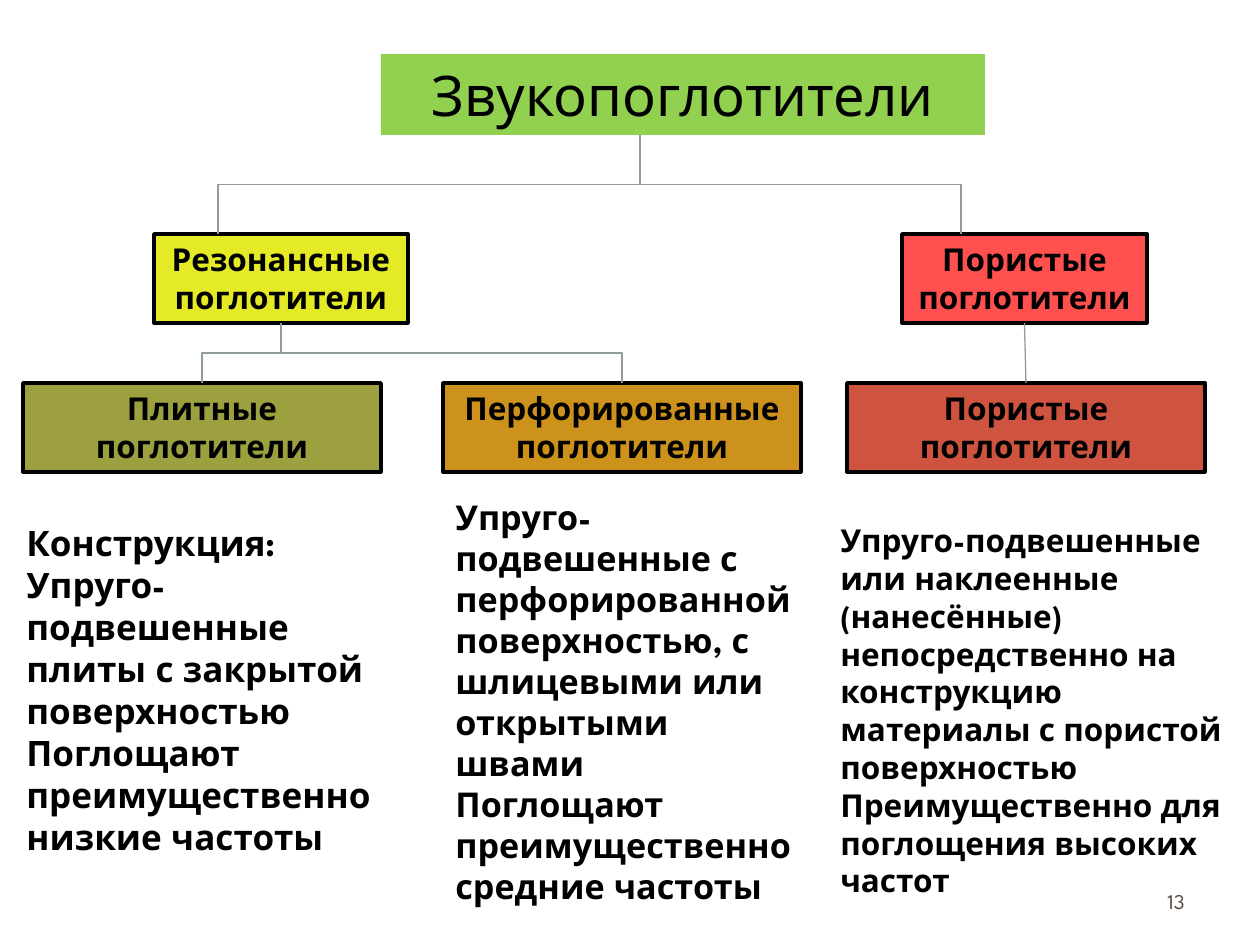
from dataclasses import dataclass

from lxml.etree import SubElement
from pptx import Presentation
from pptx.dml.color import RGBColor
from pptx.enum.shapes import MSO_CONNECTOR as Connector, MSO_SHAPE as Shape
from pptx.enum.text import MSO_ANCHOR as Anchor, MSO_AUTO_SIZE as AutoSize, PP_ALIGN as Align
from pptx.oxml.ns import qn
from pptx.util import Emu, Pt


@dataclass(frozen=True)
class Theme:
    font: str = "League Spartan"
    ink: str = "000000"
    muted: str = "564B3C"
    branch: str = "8F9F96"
    title_fill: str = "92D050"
    resonant: str = "E5EA26"
    porous: str = "FF5050"
    plate: str = "9DA03F"
    perforated: str = "CD921B"
    porous_kind: str = "CF543F"
    title_size: float = 32
    label_size: float = 18
    plate_size: float = 20
    perforated_size: float = 19.5
    porous_size: float = 18
    number_size: float = 12
    border: float = 2
    branch_width: float = 0.75


def px(value):
    return Emu(round(value * 914400 / 126))


class Diagram:
    def __init__(self, slide, theme):
        self.shapes = slide.shapes
        self.theme = theme

    def fill_text(self, frame, text, size, align, bold=True, color=None):
        frame.text = text
        for para in frame.paragraphs:
            para.alignment = align
            for span in para.runs:
                span.font.name = self.theme.font
                span.font.size = Pt(size)
                span.font.bold = bold
                span.font.color.rgb = RGBColor.from_string(color or self.theme.ink)

    def rectangle(self, area, fill):
        box = self.shapes.add_shape(Shape.RECTANGLE, *map(px, area))
        box.shadow.inherit = False
        box.fill.solid()
        box.fill.fore_color.rgb = RGBColor.from_string(fill)
        box.text_frame.vertical_anchor = Anchor.TOP
        return box

    def title(self, area, text):
        box = self.rectangle(area, self.theme.title_fill)
        box.line.fill.background()
        box.text_frame.word_wrap = True
        self.fill_text(box.text_frame, text, self.theme.title_size, Align.CENTER, bold=False)

    def node(self, area, text, fill):
        box = self.rectangle(area, fill)
        box.line.color.rgb = RGBColor.from_string(self.theme.ink)
        box.line.width = Pt(self.theme.border)
        box.text_frame.word_wrap = False
        self.fill_text(box.text_frame, text, self.theme.label_size, Align.CENTER)
        return box

    def note(self, area, text, size):
        box = self.shapes.add_textbox(*map(px, area))
        box.text_frame.word_wrap = True
        box.text_frame.auto_size = AutoSize.SHAPE_TO_FIT_TEXT
        self.fill_text(box.text_frame, text, size, Align.LEFT)

    def page_number(self, area, text):
        box = self.shapes.add_textbox(*map(px, area))
        box.text_frame.word_wrap = True
        box.text_frame.vertical_anchor = Anchor.MIDDLE
        self.fill_text(box.text_frame, text, self.theme.number_size, Align.RIGHT,
                       bold=False, color=self.theme.muted)

    def connector(self, kind, *ends):
        line = self.shapes.add_connector(kind, *map(px, ends))
        line.line.color.rgb = RGBColor.from_string(self.theme.branch)
        line.line.width = Pt(self.theme.branch_width)
        SubElement(line._element.spPr, qn("a:effectLst"))
        return line

    def branch(self, start, end):
        (x1, y1), (x2, y2) = start, end
        center_x, center_y = (x1 + x2) / 2, (y1 + y2) / 2
        half_drop, half_span = (y2 - y1) / 2, abs(x2 - x1) / 2
        line = self.connector(Connector.ELBOW, center_x - half_drop, center_y - half_span,
                              center_x + half_drop, center_y + half_span)
        frame = line._element.spPr.find(qn("a:xfrm"))
        if x2 < x1:
            frame.set("rot", "5400000")
        else:
            frame.set("rot", "16200000")
            frame.set("flipH", "1")

    def link(self, upper, lower):
        line = self.connector(Connector.STRAIGHT, 0, 0, 0, 0)
        line.begin_connect(upper, 2)
        line.end_connect(lower, 0)


def main():
    theme = Theme()
    deck = Presentation()
    deck.slide_width, deck.slide_height = px(1260), px(945)
    page = deck.slides.add_slide(deck.slide_layouts[6])
    diagram = Diagram(page, theme)

    diagram.page_number((903, 876, 294, 50), "13")
    diagram.node((154, 234, 254, 89), "Резонансные\nпоглотители", theme.resonant)
    porous = diagram.node((902, 234, 245, 89), "Пористые\nпоглотители", theme.porous)
    kinds = [
        (23, "Плитные", theme.plate),
        (443, "Перфорированные", theme.perforated),
        (847, "Пористые", theme.porous_kind),
    ]
    nodes = [diagram.node((left, 383, 358, 89), f"{name}\nпоглотители", fill)
             for left, name, fill in kinds]

    for start, ends in [((640, 135), [(218, 234), (961, 234)]),
                        ((281, 323), [(202, 383), (622, 383)])]:
        for end in ends:
            diagram.branch(start, end)
    diagram.link(porous, nodes[-1])

    diagram.note((14, 515, 377, 391),
                 "Конструкция:\n"
                 "Упруго-подвешенные плиты с закрытой поверхностью\n"
                 "Поглощают преимущественно низкие частоты", theme.plate_size)
    diagram.note((443, 490, 373, 423),
                 "Упруго-подвешенные с перфорированной поверхностью, "
                 "с шлицевыми или открытыми швами\n"
                 "Поглощают преимущественно средние частоты", theme.perforated_size)
    diagram.note((828, 515, 417, 432),
                 "Упруго-подвешенные или наклеенные (нанесённые) непосредственно "
                 "на конструкцию материалы с пористой поверхностью\n"
                 "Преимущественно для поглощения высоких частот", theme.porous_size)
    diagram.title((381, 54, 604, 81), "Звукопоглотители")

    deck.save("out.pptx")


if __name__ == "__main__":
    main()
